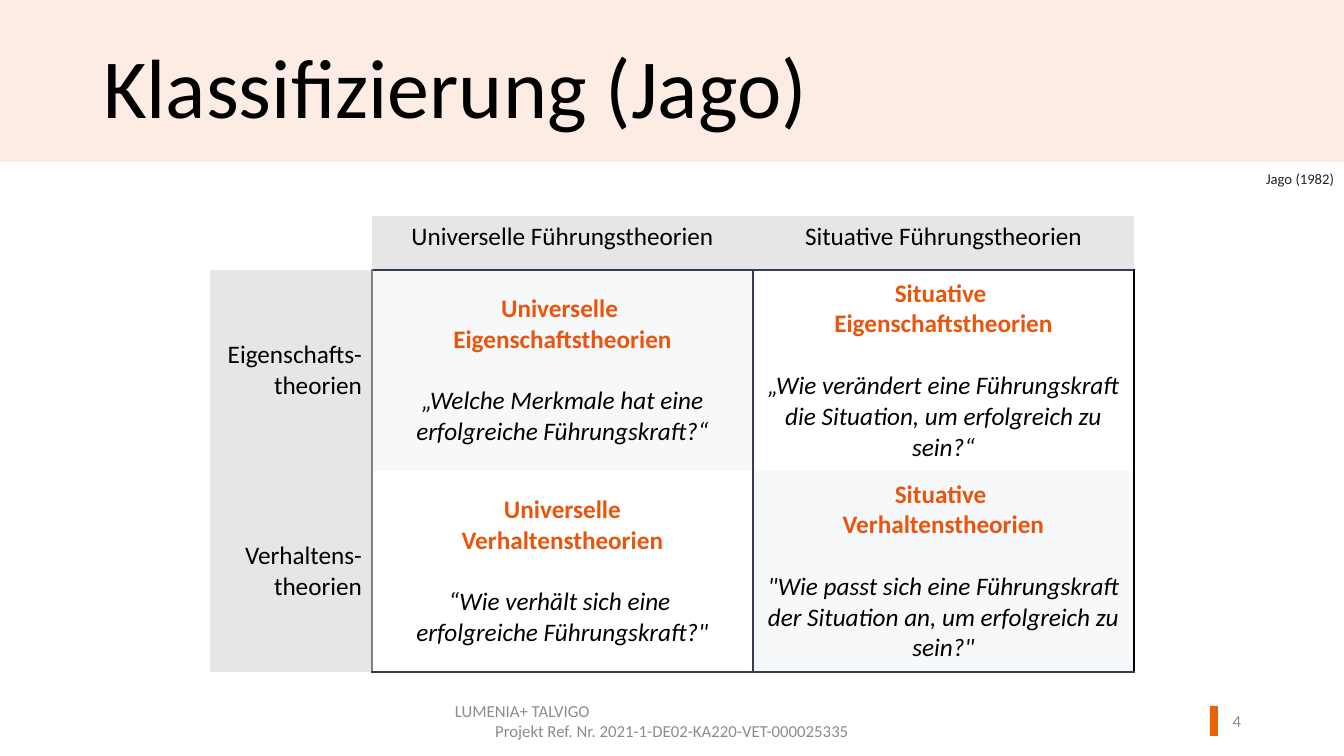
from lxml import etree
from pptx import Presentation
from pptx import util as u
from pptx.dml.color import RGBColor
from pptx.enum import shapes, text
from pptx.oxml.ns import qn

EMU_PER_PX = 914400 / 100.8
FONT = "Calibri"
BLACK, WHITE, GREY = "000000", "FFFFFF", "8C8C8C"
ORANGE, HEADER_FILL, TINT = "E9550D", "E7E6E6", "F7F8FA"
FRAME, LEFT_RULE = "333F50", "808080"
NO_STYLE_NO_GRID = "{2D5ABB26-0587-4C30-8999-92F81FD0307C}"
LEFT, CENTER, RIGHT = text.PP_ALIGN.LEFT, text.PP_ALIGN.CENTER, text.PP_ALIGN.RIGHT
TOP, MIDDLE = text.MSO_ANCHOR.TOP, text.MSO_ANCHOR.MIDDLE

COLUMN_WIDTHS = [162, 381, 381]
ROW_HEIGHTS = [54, 201, 201]
COLUMN_HEADS = ["Universelle Führungstheorien", "Situative Führungstheorien"]
ROW_HEADS = ["Eigenschafts-theorien", "Verhaltens-theorien"]
# Each theory: the two lines of its name, then the lines of its question
THEORIES = [
    [(["Universelle ", "Eigenschaftstheorien"],
      ["„Welche Merkmale hat eine erfolgreiche Führungskraft?“"]),
     (["Situative ", "Eigenschaftstheorien"],
      ["„Wie verändert eine Führungskraft die Situation, um erfolgreich zu sein?“"])],
    [(["Universelle", "Verhaltenstheorien"],
      ["“Wie verhält sich eine ", 'erfolgreiche Führungskraft?"']),
     (["Situative ", "Verhaltenstheorien"],
      ['"Wie passt sich eine Führungskraft der Situation an, um erfolgreich zu sein?"'])],
]


def px(*lengths):
    return [u.Emu(round(length * EMU_PER_PX)) for length in lengths]


def rgb(color):
    return RGBColor.from_string(color)


def write(frame, line, size=18, color=BLACK, bold=False, italic=False,
          align=LEFT, before=0, spacing=None):
    """Write one paragraph, reusing the first one while it is empty."""
    paragraph = frame.paragraphs[-1]
    if paragraph.runs:
        paragraph = frame.add_paragraph()
    paragraph.alignment = align
    paragraph.space_before = u.Pt(before)
    if spacing:
        paragraph.line_spacing = spacing
    run = paragraph.add_run()
    run.text = line
    font = run.font
    font.name, font.size, font.bold, font.italic = FONT, u.Pt(size), bold, italic
    font.color.rgb = rgb(color)


def add_bar(slide, box, color):
    shape = slide.shapes.add_shape(shapes.MSO_SHAPE.RECTANGLE, *px(*box))
    shape.shadow.inherit = False
    shape.fill.solid()
    shape.fill.fore_color.rgb = rgb(color)
    shape.line.fill.background()
    return shape


def add_text(slide, box, anchor=TOP):
    frame = slide.shapes.add_textbox(*px(*box)).text_frame
    frame.word_wrap = True
    frame.vertical_anchor = anchor
    return frame


def set_title(slide, box, title):
    shape = slide.shapes.title
    shape.left, shape.top, shape.width, shape.height = px(*box)
    frame = shape.text_frame
    frame.vertical_anchor = TOP
    frame.auto_size = text.MSO_AUTO_SIZE.NONE
    write(frame, title, size=60, spacing=0.9)


def format_cell(cell, fill, anchor=TOP, **borders):
    """Set the borders named by side (L, R, T, B), then fill and anchor."""
    properties = cell._tc.get_or_add_tcPr()
    for side in "LRTB":
        line = etree.SubElement(properties, qn("a:ln" + side), w=str(u.Pt(1)))
        if side in borders:
            solid = etree.SubElement(line, qn("a:solidFill"))
            etree.SubElement(solid, qn("a:srgbClr"), val=borders[side])
        else:
            etree.SubElement(line, qn("a:noFill"))
    cell.fill.solid()
    cell.fill.fore_color.rgb = rgb(fill)
    cell.vertical_anchor = anchor


def add_theory_table(slide, left, top):
    box = px(left, top, sum(COLUMN_WIDTHS), sum(ROW_HEIGHTS))
    table = slide.shapes.add_table(3, 3, *box).table
    table.first_row = table.horz_banding = False
    table._tbl.tblPr.find(qn("a:tableStyleId")).text = NO_STYLE_NO_GRID
    for column, width in zip(table.columns, px(*COLUMN_WIDTHS)):
        column.width = width
    for row, height in zip(table.rows, px(*ROW_HEIGHTS)):
        row.height = height

    # Column and row heads
    table.cell(0, 0).fill.background()
    for index, head in enumerate(COLUMN_HEADS, 1):
        cell = table.cell(0, index)
        format_cell(cell, HEADER_FILL, B=FRAME)
        write(cell.text_frame, head, align=CENTER)
    for index, head in enumerate(ROW_HEADS, 1):
        cell = table.cell(index, 0)
        format_cell(cell, HEADER_FILL, MIDDLE, R=LEFT_RULE)
        write(cell.text_frame, head, align=RIGHT)

    # Theories, tinted like a chessboard
    for row, theories in enumerate(THEORIES, 1):
        for column, (name, question) in enumerate(theories, 1):
            cell = table.cell(row, column)
            borders = {"L": LEFT_RULE, "R": FRAME} if column == 1 else {"L": FRAME, "R": BLACK}
            borders["T" if row == 1 else "B"] = FRAME
            format_cell(cell, TINT if row == column else WHITE, MIDDLE, **borders)
            for line in name:
                write(cell.text_frame, line, color=ORANGE, bold=True, align=CENTER)
            for index, line in enumerate(question):
                write(cell.text_frame, line, italic=True, align=CENTER,
                      before=0 if index else 22)


def main():
    presentation = Presentation()
    presentation.slide_width, presentation.slide_height = px(1344, 756)
    slide = presentation.slides.add_slide(presentation.slide_layouts[5])

    # Title on its band
    band = add_bar(slide, (0, 0, 1344, 162), "FDECE3")
    slide.shapes.title._element.addprevious(band._element)
    set_title(slide, (93, 41, 1001, 86), "Klassifizierung (Jago)")

    # Source and table
    source = add_text(slide, (1237, 165, 107, 28))
    write(source, "Jago (1982)", size=10.5, color="222222", align=RIGHT)
    add_theory_table(slide, 210, 216)

    # Footer
    footer = add_text(slide, (445, 701, 454, 40), MIDDLE)
    write(footer, "LUMENIA+ TALVIGO", size=12, color=GREY)
    write(footer, "Projekt Ref. Nr. 2021-1-DE02-KA220-VET-000025335",
          size=12, color=GREY, align=CENTER)
    add_bar(slide, (1210, 706, 8, 30), "E86507")
    number = add_text(slide, (1186, 701, 65, 40), MIDDLE)
    write(number, "4", size=12, color=GREY, align=RIGHT)

    presentation.save("out.pptx")


if __name__ == "__main__":
    main()
